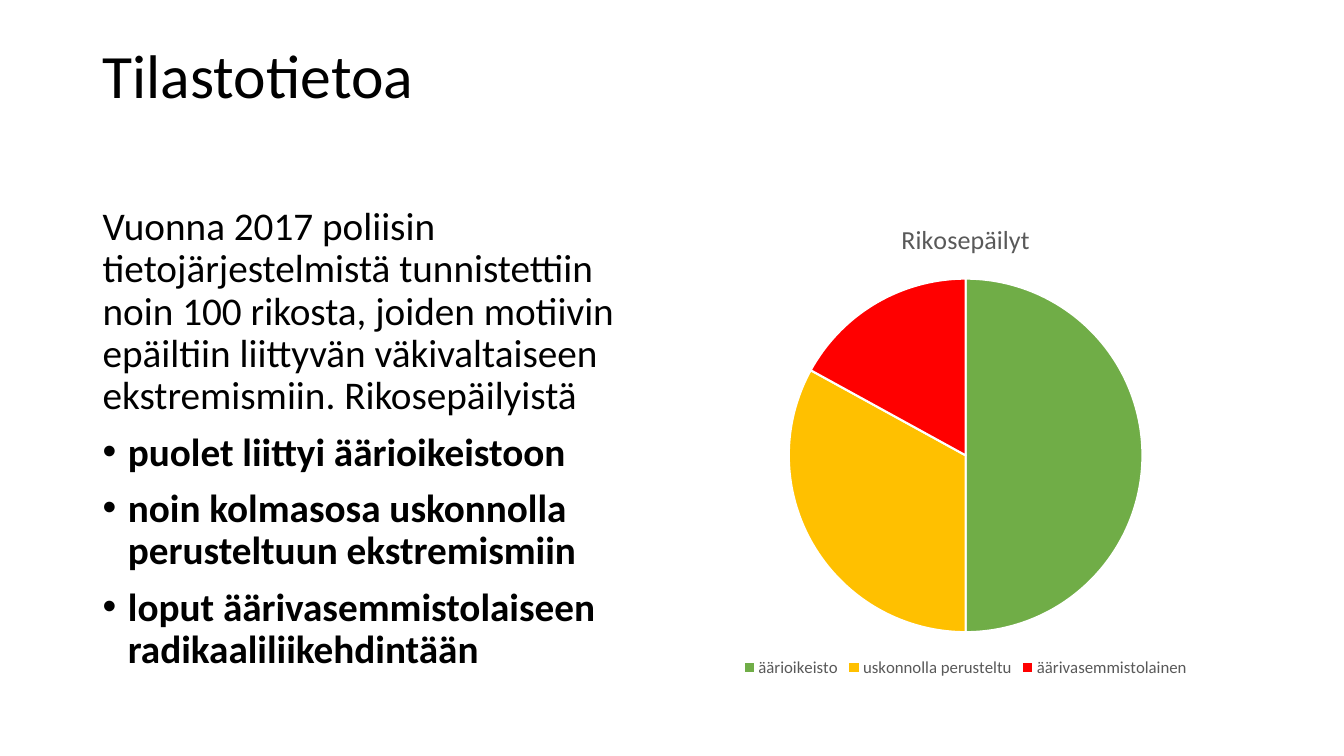
"""Builds a statistics slide with a text column and a pie chart."""
from lxml import etree
from pptx import Presentation, util as u
from pptx.chart.data import CategoryChartData
from pptx.dml.color import RGBColor
from pptx.enum import chart as ch, text
from pptx.oxml import ns

FONT = "Calibri"
BLACK, GREY, WHITE = "000000", "595959", "FFFFFF"
WIDTH, HEIGHT = 13.33, 7.5
MARGIN, GUTTER = 0.92, 0.16
COLUMN = (WIDTH - 2 * MARGIN - GUTTER) / 2
TITLE_TOP, TITLE_HEIGHT = 0.4, 1.45
BODY_TOP, BODY_HEIGHT = 2, 4.76

INTRO = (
    "Vuonna 2017 poliisin tietojärjestelmistä tunnistettiin noin 100 rikosta, "
    "joiden motiivin epäiltiin liittyvän väkivaltaiseen ekstremismiin. Rikosepäilyistä"
)
FINDINGS = [
    "puolet liittyi äärioikeistoon",
    "noin kolmasosa uskonnolla perusteltuun ekstremismiin",
    "loput äärivasemmistolaiseen radikaaliliikehdintään",
]
CHART_TITLE = "Rikosepäilyt"
SHARES = [
    ("äärioikeisto", 50, "70AD47"),
    ("uskonnolla perusteltu", 33, "FFC000"),
    ("äärivasemmistolainen", 17, "FF0000"),
]


def rgb(value):
    """Turn a hex string into a colour."""
    return RGBColor.from_string(value)


def box(column, columns, top, height):
    """Return left, top, width and height for a span of grid columns."""
    left = MARGIN + column * (COLUMN + GUTTER)
    width = columns * COLUMN + (columns - 1) * GUTTER
    return [u.Inches(n) for n in (left, top, width, height)]


def style_font(font, size, color, bold=False):
    """Set the typeface, size, colour and weight of a font."""
    font.name, font.size, font.bold = FONT, u.Pt(size), bold
    font.color.rgb = rgb(color)


def add_bullet(p):
    """Give a paragraph a hanging round bullet."""
    pPr = p._p.get_or_add_pPr()
    pPr.set("marL", str(u.Inches(0.25)))
    pPr.set("indent", str(-u.Inches(0.25)))
    etree.SubElement(pPr, ns.qn("a:buFont")).set("typeface", "Arial")
    etree.SubElement(pPr, ns.qn("a:buChar")).set("char", "•")


def add_text(s, place, lines, size, before=0):
    """Add a text box whose lines after the first are bold bullets."""
    tf = s.shapes.add_textbox(*place).text_frame
    tf.word_wrap = True
    tf.vertical_anchor = text.MSO_ANCHOR.TOP
    tf.text = "\n".join(lines)
    for i, p in enumerate(tf.paragraphs):
        p.line_spacing, p.space_before = 0.9, u.Pt(before)
        if i:
            add_bullet(p)
        style_font(p.runs[0].font, size, BLACK, bold=i > 0)


def add_pie(s, place, title, shares):
    """Add a titled pie chart with a legend below it."""
    data = CategoryChartData()
    data.categories = [name for name, _, _ in shares]
    data.add_series(title, [value for _, value, _ in shares])
    chart = s.shapes.add_chart(ch.XL_CHART_TYPE.PIE, *place, data).chart
    style_font(chart.font, 10, BLACK)
    chart.has_title = True
    tf = chart.chart_title.text_frame
    tf.text = title
    style_font(tf.paragraphs[0].runs[0].font, 18.6, GREY)
    chart.has_legend = True
    chart.legend.position = ch.XL_LEGEND_POSITION.BOTTOM
    chart.legend.include_in_layout = False
    style_font(chart.legend.font, 12, GREY)
    plot = chart.plots[0]
    plot.vary_by_categories = True
    for i, (_, _, color) in enumerate(shares):
        look = plot.series[0].points[i].format
        look.fill.solid()
        look.fill.fore_color.rgb = rgb(color)
        look.line.color.rgb = rgb(WHITE)
        look.line.width = u.Pt(1.5)


def main():
    """Build the slide and save it."""
    prs = Presentation()
    prs.slide_width, prs.slide_height = u.Inches(WIDTH), u.Inches(HEIGHT)
    s = prs.slides.add_slide(prs.slide_layouts[6])
    add_text(s, box(0, 2, TITLE_TOP, TITLE_HEIGHT), ["Tilastotietoa"], 44)
    add_text(s, box(0, 1, BODY_TOP, BODY_HEIGHT), [INTRO, *FINDINGS], 28, before=10)
    add_pie(s, box(1, 1, BODY_TOP, BODY_HEIGHT), CHART_TITLE, SHARES)
    prs.save("out.pptx")


if __name__ == "__main__":
    main()
